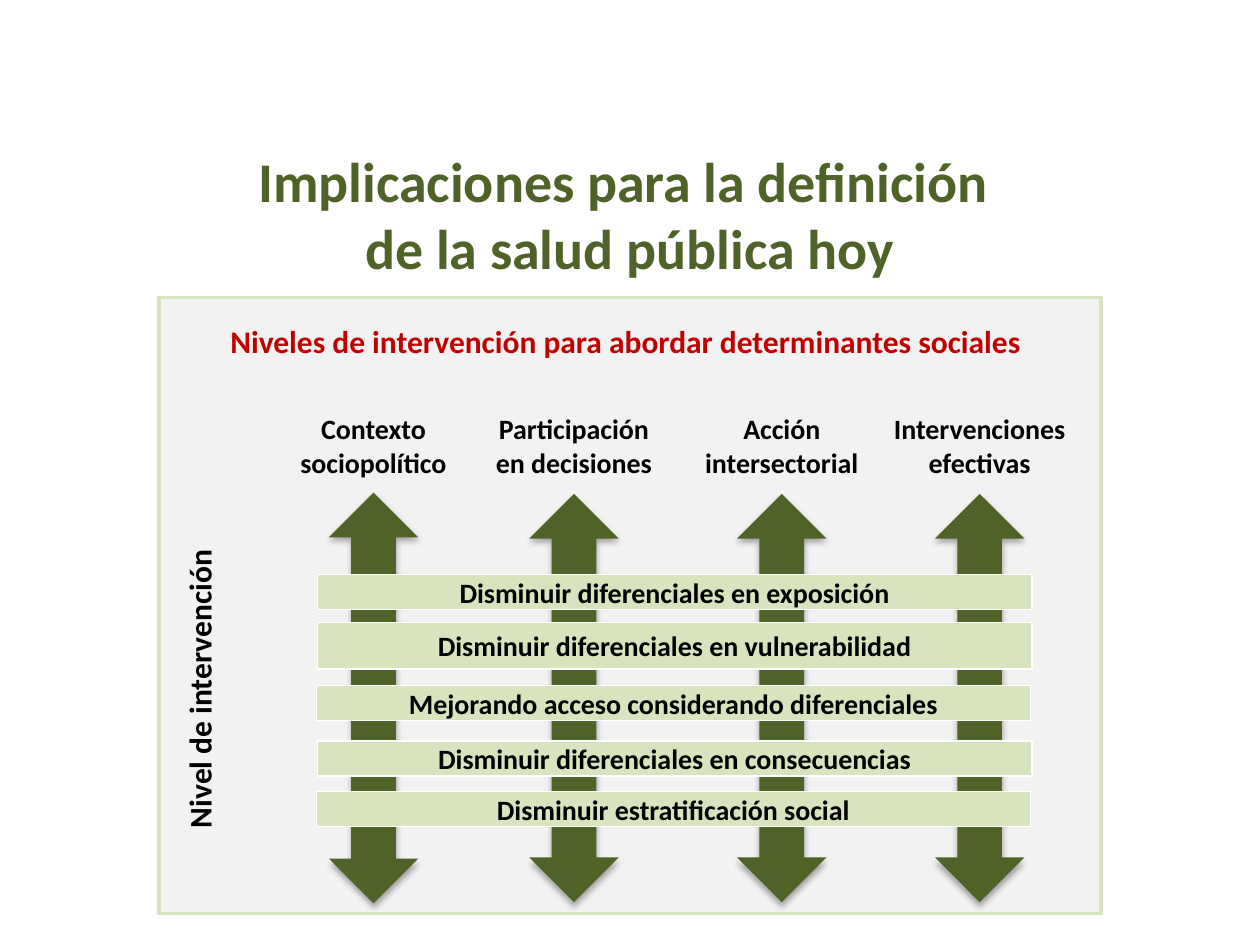
"""Build the slide on levels of intervention in public health."""
from dataclasses import dataclass

from lxml import etree
from pptx import Presentation
from pptx import util as u
from pptx.dml.color import RGBColor
from pptx.enum import shapes, text
from pptx.oxml import ns


@dataclass(frozen=True)
class Theme:
    """Colours, font and type sizes of the slide."""
    green: str = "4F6228"
    pale_green: str = "D7E4BD"
    grey: str = "F2F2F2"
    red: str = "C00000"
    black: str = "000000"
    white: str = "FFFFFF"
    font: str = "Calibri"
    title: int = 32
    heading: int = 18
    label: int = 16


THEME = Theme()
COLUMNS = [
    ("Contexto sociopolítico", 2.61, 3.91, 3.26, 1.5),
    ("Participación en decisiones", 4.2, 3.92, 3.24, 1.5),
    ("Acción intersectorial", 5.85, 3.92, 3.24, 1.5),
    ("Intervenciones efectivas", 7.42, 3.92, 3.24, 1.65),
]
BARS = [
    ("Disminuir diferenciales en exposición", 2.52, 4.56, 0.28),
    ("Disminuir diferenciales en vulnerabilidad", 2.52, 4.94, 0.37),
    ("Mejorando acceso considerando diferenciales", 2.51, 5.44, 0.28),
    ("Disminuir diferenciales en consecuencias", 2.52, 5.88, 0.28),
    ("Disminuir estratificación social", 2.51, 6.28, 0.28),
]
ARROW_WIDTH = 0.71


def inches(*lengths):
    """Convert lengths in inches for a shape call."""
    return [u.Inches(length) for length in lengths]


def write(box, lines, size, color, anchor=text.MSO_ANCHOR.TOP):
    """Fill a box with bold centred lines, one paragraph each."""
    frame = box.text_frame
    settings = {"word_wrap": True, "auto_size": text.MSO_AUTO_SIZE.NONE,
                "vertical_anchor": anchor}
    for name, value in settings.items():
        setattr(frame, name, value)
    frame.text = "\n".join(lines)
    for para in frame.paragraphs:
        para.alignment = text.PP_ALIGN.CENTER
        for span in para.runs:
            for name, value in {"name": THEME.font, "size": u.Pt(size), "bold": True}.items():
                setattr(span.font, name, value)
            span.font.color.rgb = RGBColor.from_string(color)


def add_title(page, lines):
    """Place and fill the title placeholder."""
    title = page.shapes.title
    place = dict(zip(("left", "top", "width", "height"), inches(0, 1.11, 10, 1.18)))
    for name, value in place.items():
        setattr(title, name, value)
    write(title, lines, THEME.title, THEME.green)


def add_label(page, wording, place, size, color=THEME.black, vertical=False):
    """Add a text box, optionally reading upwards."""
    box = page.shapes.add_textbox(*inches(*place))
    write(box, [wording], size, color)
    if vertical:
        box.element.txBody.bodyPr.set("vert", "vert270")


def add_block(page, kind, place, fill, line=None, line_width=0):
    """Add a flat filled shape with an optional outline."""
    block = page.shapes.add_shape(kind, *inches(*place))
    block.shadow.inherit = False
    block.fill.solid()
    block.fill.fore_color.rgb = RGBColor.from_string(fill)
    if line:
        block.line.color.rgb = RGBColor.from_string(line)
        block.line.width = u.Pt(line_width)
    else:
        block.line.fill.background()
    return block


def add_arrow(page, place):
    """Add a double arrow with a soft shadow below it."""
    arrow = add_block(page, shapes.MSO_SHAPE.UP_DOWN_ARROW, place, THEME.green)
    effects = arrow.element.spPr.find(ns.qn("a:effectLst"))
    shadow = etree.SubElement(effects, ns.qn("a:outerShdw"), blurRad=str(u.Pt(3.5)),
                              dist=str(u.Pt(2.2)), dir="5400000", rotWithShape="0")
    color = etree.SubElement(shadow, ns.qn("a:srgbClr"), val=THEME.black)
    etree.SubElement(color, ns.qn("a:alpha"), val="32000")


def add_bar(page, wording, left, top, height):
    """Add a captioned bar that crosses the arrows."""
    bar = add_block(page, shapes.MSO_SHAPE.RECTANGLE, (left, top, 5.67, height),
                    THEME.pale_green, THEME.white, 0.75)
    write(bar, [wording], THEME.label, THEME.black, text.MSO_ANCHOR.MIDDLE)


def main():
    """Build and save the deck."""
    deck = Presentation()
    deck.slide_width, deck.slide_height = inches(10, 7.5)
    page = deck.slides.add_slide(deck.slide_layouts.get_by_name("Title Only"))
    add_title(page, ["Implicaciones para la definición ", "de la salud pública hoy"])
    add_block(page, shapes.MSO_SHAPE.RECTANGLE, (1.26, 2.36, 7.48, 4.89),
              THEME.grey, THEME.pale_green, 2)
    for _, left, top, height, _ in COLUMNS:
        add_arrow(page, (left, top, ARROW_WIDTH, height))
    for bar in BARS:
        add_bar(page, *bar)
    add_label(page, "Niveles de intervención para abordar determinantes sociales ",
              (1.72, 2.51, 6.55, 0.4), THEME.heading, THEME.red)
    for wording, left, _, _, width in COLUMNS:
        label_left = left + (ARROW_WIDTH - width) / 2
        add_label(page, wording, (label_left, 3.22, width, 0.64), THEME.label)
    add_label(page, "Nivel de intervención ", (1.38, 4.1, 0.5, 2.68),
              THEME.heading, vertical=True)
    deck.save("out.pptx")


if __name__ == "__main__":
    main()
